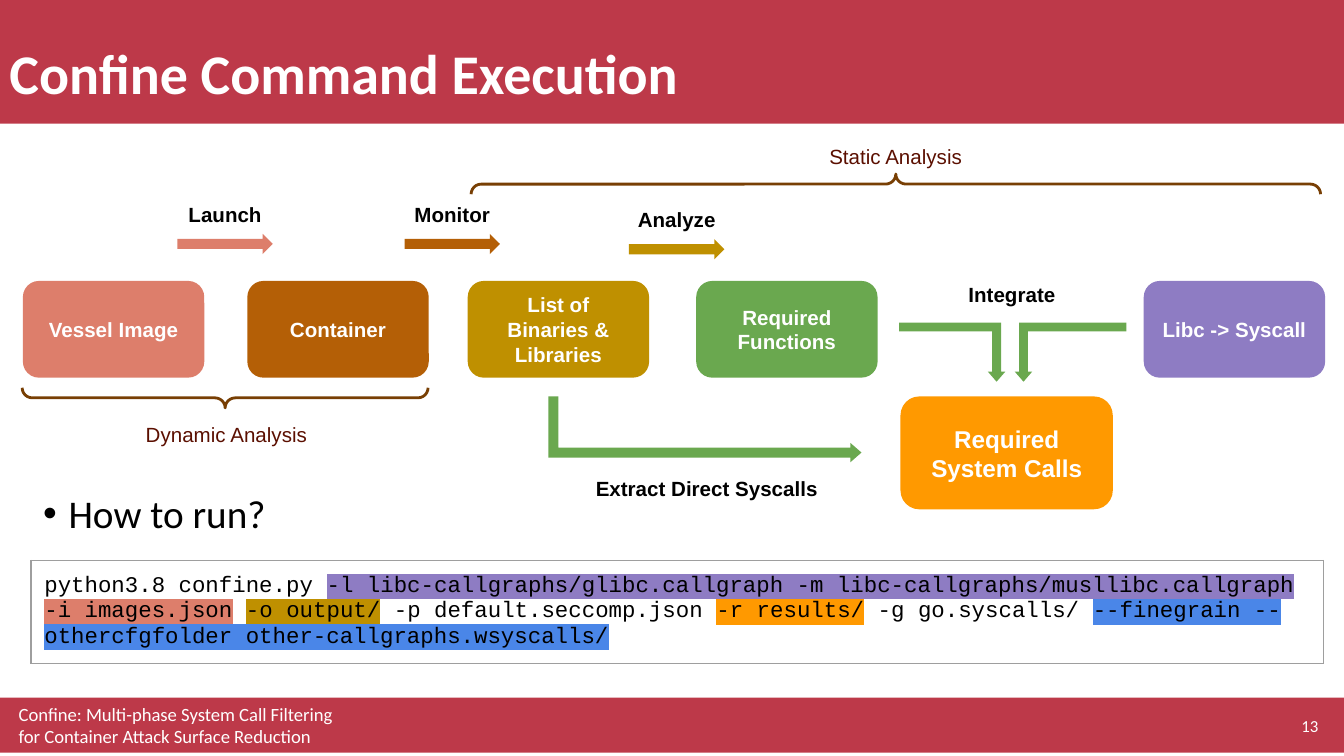
from lxml import etree
from pptx import Presentation
from pptx import util as u
from pptx.dml.color import RGBColor
from pptx.enum import shapes, text
from pptx.oxml.ns import qn

C = {"red": "BD3949", "white": "FFFFFF", "black": "000000", "salmon": "DD7E6B",
     "rust": "B45F06", "gold": "BF9000", "green": "6AA84F", "purple": "8E7CC3",
     "orange": "FF9900", "blue": "4A86E8", "brown": "783F04", "maroon": "5B0F00",
     "grey": "9E9E9E"}
KIND, AL, ANC = shapes.MSO_SHAPE, text.PP_ALIGN, text.MSO_ANCHOR

prs = Presentation()
prs.slide_width = u.Inches(10)
prs.slide_height = prs.slide_width * 9 // 16
UNIT = prs.slide_width / 100  # square grid: 100 columns across the slide
s = prs.slides.add_slide(prs.slide_layouts[1])


def grid(*cells):
    return [round(c * UNIT) for c in cells]


def write(tf, lines, size, color, font="Arial", bold=False, align=AL.CENTER,
          anchor=ANC.TOP, inset=(1, 1)):
    """Fill a text frame with one paragraph per line; inset is (sides, top and bottom)."""
    dx, dy = grid(*inset)
    frame = {"word_wrap": True, "auto_size": text.MSO_AUTO_SIZE.NONE,
             "vertical_anchor": anchor, "margin_left": dx, "margin_right": dx,
             "margin_top": dy, "margin_bottom": dy}
    for name, value in frame.items():
        setattr(tf, name, value)
    tf.text = lines
    for p in tf.paragraphs:
        p.alignment = align
        for r in p.runs:
            for name, value in {"size": u.Pt(size), "name": font, "bold": bold}.items():
                setattr(r.font, name, value)
            r.font.color.rgb = RGBColor.from_string(C[color])


# Title and "How to run?" placeholders
title, body = s.shapes.title, s.placeholders[1]
title.left, title.top, title.width, title.height = grid(0, 0, 100, 9.2)
title.fill.solid()
title.fill.fore_color.rgb = RGBColor.from_string(C["red"])
write(title.text_frame, "Confine Command Execution", 30, "white", "Calibri", True,
      AL.LEFT, inset=(0.7, 0.4))
body.left, body.top, body.width, body.height = grid(2.5, 35.5, 25.5, 5.8)
write(body.text_frame, "How to run?", 21, "black", "Calibri", align=AL.LEFT,
      inset=(0.7, 0.4))
for holder, spacing, before in [(title, 1.5, 19), (body, 1.15, 8)]:
    p = holder.text_frame.paragraphs[0]
    p.line_spacing, p.space_before = spacing, u.Pt(before)
pPr = body.text_frame.paragraphs[0]._p.get_or_add_pPr()
pPr.set("marL", str(u.Inches(0.19)))
pPr.set("indent", str(u.Inches(-0.24)))
bullet_color = etree.SubElement(pPr, qn("a:buClr"))
etree.SubElement(bullet_color, qn("a:srgbClr"), val=C["black"])
etree.SubElement(pPr, qn("a:buChar"), char="•")

# Filled shapes: kind, place, colour, rotation, mirrored, adjustments, label, label size
BOX, BENT = [0.167], [0.151, 0.148, 0.171]
filled = [(KIND.RECTANGLE, (0, 51.9, 100, 4.1), "red", 0, False, [], "", 0)]
for x, color, label in [(1.7, "salmon", "Vessel Image"), (18.4, "rust", "Container"),
                        (34.8, "gold", "List of Binaries & Libraries"),
                        (51.8, "green", "Required Functions"),
                        (85.1, "purple", "Libc -> Syscall")]:
    filled.append((KIND.ROUNDED_RECTANGLE, (x, 20.9, 13.5, 7.2), color, 0, False,
                   BOX, label, 11))
filled.append((KIND.ROUNDED_RECTANGLE, (67, 29.5, 15.8, 8.4), "orange", 0, False,
               BOX, "Required System Calls", 13))
steps = [(13.2, 17.4, "salmon", "Launch"), (30.1, 17.4, "rust", "Monitor"),
         (46.8, 17.8, "gold", "Analyze")]
for x, y, color, _ in steps:
    filled.append((KIND.RIGHT_ARROW, (x, y, 7.1, 1.5), color, 0, False, [0.5, 0.5], "", 0))
for place, turn, mirrored in [((50, 20.3, 4.9, 23.3), 90, False),
                              ((66.9, 24, 7.9, 4.4), 180, True),
                              ((75.5, 24, 8.3, 4.4), 180, False)]:
    filled.append((KIND.BENT_UP_ARROW, place, "green", turn, mirrored, BENT, "", 0))

for kind, place, color, turn, mirrored, adjust, label, size in filled:
    sp = s.shapes.add_shape(kind, *grid(*place))
    sp.shadow.inherit = False
    sp.fill.solid()
    sp.fill.fore_color.rgb = RGBColor.from_string(C[color])
    sp.line.fill.background()
    sp.rotation = turn
    for i, value in enumerate(adjust):
        sp.adjustments[i] = value
    if mirrored:
        sp._element.spPr.get_or_add_xfrm().set("flipH", "1")
    if label:
        write(sp.text_frame, label, size, "white", bold=True, anchor=ANC.MIDDLE)

# Braces over the static and under the dynamic steps
for place, turn in [((16, 14.5, 1.5, 30.2), 270), ((65.9, -17.9, 1.5, 63.2), 90)]:
    brace = s.shapes.add_shape(KIND.LEFT_BRACE, *grid(*place))
    brace.shadow.inherit = False
    brace.fill.background()
    brace.line.color.rgb = RGBColor.from_string(C["brown"])
    brace.line.width = u.Pt(1.5)
    brace.rotation = turn
    brace.adjustments[0] = brace.adjustments[1] = 0.5

# Captions, footer and page number
plain = {"size": 11, "color": "maroon"}
strong = {"size": 11, "color": "black", "bold": True}
foot = {"color": "white", "font": "Calibri"}
captions = [((9.3, 30.4, 15.1, 3), "Dynamic Analysis", plain),
            ((59.1, 9.7, 15.1, 3), "Static Analysis", plain),
            ((42.6, 34.4, 20, 3), "Extract Direct Syscalls", strong),
            ((65.3, 20, 20, 3), "Integrate", strong),
            ((0.4, 51.3, 55.9, 5), "Confine: Multi-phase System Call Filtering\n"
             "for Container Attack Surface Reduction",
             {**foot, "size": 10, "align": AL.LEFT}),
            ((94.9, 52.5, 3.9, 3), "13",
             {**foot, "size": 9, "align": AL.RIGHT, "anchor": ANC.MIDDLE,
              "inset": (0.7, 0.4)})]
captions += [((x - 4, y - 3.4, 15.1, 3), label, strong) for x, y, _, label in steps]
for place, label, style in captions:
    write(s.shapes.add_textbox(*grid(*place)).text_frame, label, **style)

# Command line in a one-cell table, its options highlighted
command = [("python3.8 confine.py ", None),
           ("-l libc-callgraphs/glibc.callgraph -m libc-callgraphs/musllibc.callgraph",
            "purple"),
           (" ", None), ("-i images.json", "salmon"), (" ", None),
           ("-o output/", "gold"), (" -p default.seccomp.json ", None),
           ("-r results/", "orange"), (" -g go.syscalls/ ", None),
           ("--finegrain --othercfgfolder other-callgraphs.wsyscalls/", "blue")]
table = s.shapes.add_table(1, 1, *grid(2.3, 41.7, 96.2, 7.6)).table
table.first_row = table.horz_banding = False
cell = table.cell(0, 0)
cell.fill.background()
for side in ("margin_left", "margin_right", "margin_top", "margin_bottom"):
    setattr(cell, side, u.Inches(0.1))
p = cell.text_frame.paragraphs[0]
for part, mark in command:
    r = p.add_run()
    r.text = part
    r.font.size, r.font.name = u.Pt(12), "Courier New"
    r.font.color.rgb = RGBColor.from_string(C["black"])
    if mark:
        highlight = etree.Element(qn("a:highlight"))
        etree.SubElement(highlight, qn("a:srgbClr"), val=C[mark])
        r._r.rPr.find(qn("a:solidFill")).addnext(highlight)
for i, edge in enumerate(("a:lnL", "a:lnR", "a:lnT", "a:lnB")):
    ln = etree.Element(qn(edge), w=str(u.Pt(0.75)))
    fill = etree.SubElement(ln, qn("a:solidFill"))
    etree.SubElement(fill, qn("a:srgbClr"), val=C["grey"])
    cell._tc.get_or_add_tcPr().insert(i, ln)

prs.save("out.pptx")
